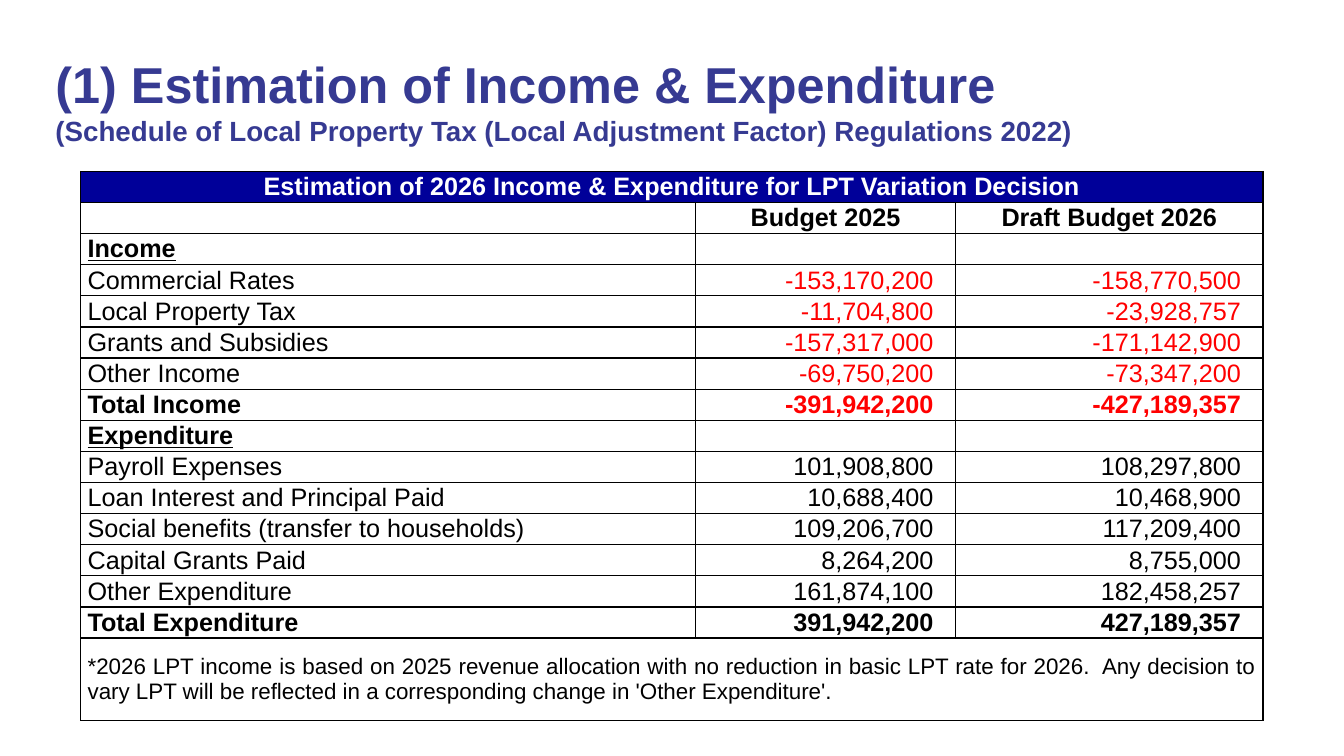
from lxml.etree import SubElement
from pptx import Presentation
from pptx.dml.color import RGBColor
from pptx.enum.text import MSO_ANCHOR, MSO_AUTO_SIZE, PP_ALIGN
from pptx.oxml.ns import qn
from pptx.util import Pt

TITLE = "(1) Estimation of Income & Expenditure"
SUBTITLE = "(Schedule of Local Property Tax (Local Adjustment Factor) Regulations 2022)"
BANNER = "Estimation of 2026 Income & Expenditure for LPT Variation Decision"
YEARS = ("Budget 2025", "Draft Budget 2026")
BUDGET = [
    ("Income", "", ""),
    ("Commercial Rates", "-153,170,200", "-158,770,500"),
    ("Local Property Tax", "-11,704,800", "-23,928,757"),
    ("Grants and Subsidies", "-157,317,000", "-171,142,900"),
    ("Other Income", "-69,750,200", "-73,347,200"),
    ("Total Income", "-391,942,200", "-427,189,357"),
    ("Expenditure", "", ""),
    ("Payroll Expenses", "101,908,800", "108,297,800"),
    ("Loan Interest and Principal Paid", "10,688,400", "10,468,900"),
    ("Social benefits (transfer to households)", "109,206,700", "117,209,400"),
    ("Capital Grants Paid", "8,264,200", "8,755,000"),
    ("Other Expenditure", "161,874,100", "182,458,257"),
    ("Total Expenditure", "391,942,200", "427,189,357"),
]
FOOTNOTE = (
    "*2026 LPT income is based on 2025 revenue allocation with no reduction in basic "
    "LPT rate for 2026.  Any decision to vary LPT will be reflected in a corresponding "
    "change in 'Other Expenditure'."
)

INDIGO = RGBColor(0x36, 0x3A, 0x92)
NAVY = RGBColor(0x00, 0x00, 0x99)
WHITE = RGBColor(0xFF, 0xFF, 0xFF)
BLACK = RGBColor(0x00, 0x00, 0x00)
RED = RGBColor(0xFF, 0x00, 0x00)

COLUMN_WIDTHS = (439.2, 185.8, 219.6)
ROW_HEIGHT = 22.25
FOOTNOTE_HEIGHT = 59
CELL_MARGIN = 5
FIGURE_MARGIN = 15.8


def write(paragraph, text, size=18, color=BLACK, bold=False, underline=False,
          align=PP_ALIGN.JUSTIFY):
    paragraph.alignment = align
    if not text:
        paragraph._p.get_or_add_endParaRPr().set("sz", str(size * 100))
        return
    run = paragraph.add_run()
    run.text = text
    font = run.font
    font.name = "Arial"
    font.size = Pt(size)
    font.bold = bold
    font.underline = underline
    font.color.rgb = color


def format_cell(cell, fill=None, right_margin=CELL_MARGIN):
    cell.vertical_anchor = MSO_ANCHOR.MIDDLE
    cell.margin_left, cell.margin_right = Pt(CELL_MARGIN), Pt(right_margin)
    cell.margin_top = cell.margin_bottom = 0
    properties = cell._tc.get_or_add_tcPr()
    for side in ("a:lnL", "a:lnR", "a:lnT", "a:lnB"):
        border = SubElement(properties, qn(side), w=str(Pt(1)))
        paint = SubElement(border, qn("a:solidFill"))
        SubElement(paint, qn("a:srgbClr"), val=str(BLACK))
    if fill is None:
        cell.fill.background()
    else:
        cell.fill.solid()
        cell.fill.fore_color.rgb = fill


def add_heading(slide):
    heading = slide.shapes.title
    heading.left, heading.top = Pt(39.6), Pt(37.4)
    heading.width, heading.height = Pt(780.5), Pt(67.7)
    frame = heading.text_frame
    frame.margin_left = frame.margin_right = frame.margin_top = frame.margin_bottom = 0
    frame.vertical_anchor = MSO_ANCHOR.MIDDLE
    frame.word_wrap = True
    frame.auto_size = MSO_AUTO_SIZE.NONE
    paragraph = frame.paragraphs[0]
    style = dict(color=INDIGO, bold=True, align=PP_ALIGN.LEFT)
    write(paragraph, TITLE, size=36, **style)
    paragraph.add_line_break()
    write(paragraph, SUBTITLE, size=19.8, **style)


def add_budget_table(slide):
    row_count = len(BUDGET) + 3
    last = row_count - 1
    height = ROW_HEIGHT * last + FOOTNOTE_HEIGHT
    table = slide.shapes.add_table(
        row_count, len(COLUMN_WIDTHS), Pt(57.6), Pt(122.4),
        Pt(sum(COLUMN_WIDTHS)), Pt(height)).table
    table.first_row = table.horz_banding = False
    for column, width in zip(table.columns, COLUMN_WIDTHS):
        column.width = Pt(width)
    for index, row in enumerate(table.rows):
        row.height = Pt(FOOTNOTE_HEIGHT if index == last else ROW_HEIGHT)
        for position, cell in enumerate(row.cells):
            is_figure = position > 0 and 1 < index < last
            format_cell(cell, NAVY if index == 0 else None,
                        FIGURE_MARGIN if is_figure else CELL_MARGIN)
    for index in (0, last):
        table.cell(index, 0).merge(table.cell(index, len(COLUMN_WIDTHS) - 1))

    def put(row, column, text, **style):
        write(table.cell(row, column).text_frame.paragraphs[0], text, **style)

    put(0, 0, BANNER, color=WHITE, bold=True, align=PP_ALIGN.CENTER)
    put(1, 0, "")
    for column, year in enumerate(YEARS, 1):
        put(1, column, year, bold=True, align=PP_ALIGN.CENTER)
    for row, (label, *figures) in enumerate(BUDGET, 2):
        is_section = not any(figures)
        bold = is_section or label.startswith("Total")
        put(row, 0, label, bold=bold, underline=is_section)
        for column, figure in enumerate(figures, 1):
            put(row, column, figure, bold=bold, align=PP_ALIGN.RIGHT,
                color=RED if figure.startswith("-") else BLACK)
    put(last, 0, FOOTNOTE, size=16)


def main():
    deck = Presentation()
    deck.slide_width, deck.slide_height = Pt(960), Pt(540)
    slide = deck.slides.add_slide(deck.slide_layouts[5])
    add_heading(slide)
    add_budget_table(slide)
    deck.save("out.pptx")


if __name__ == "__main__":
    main()
